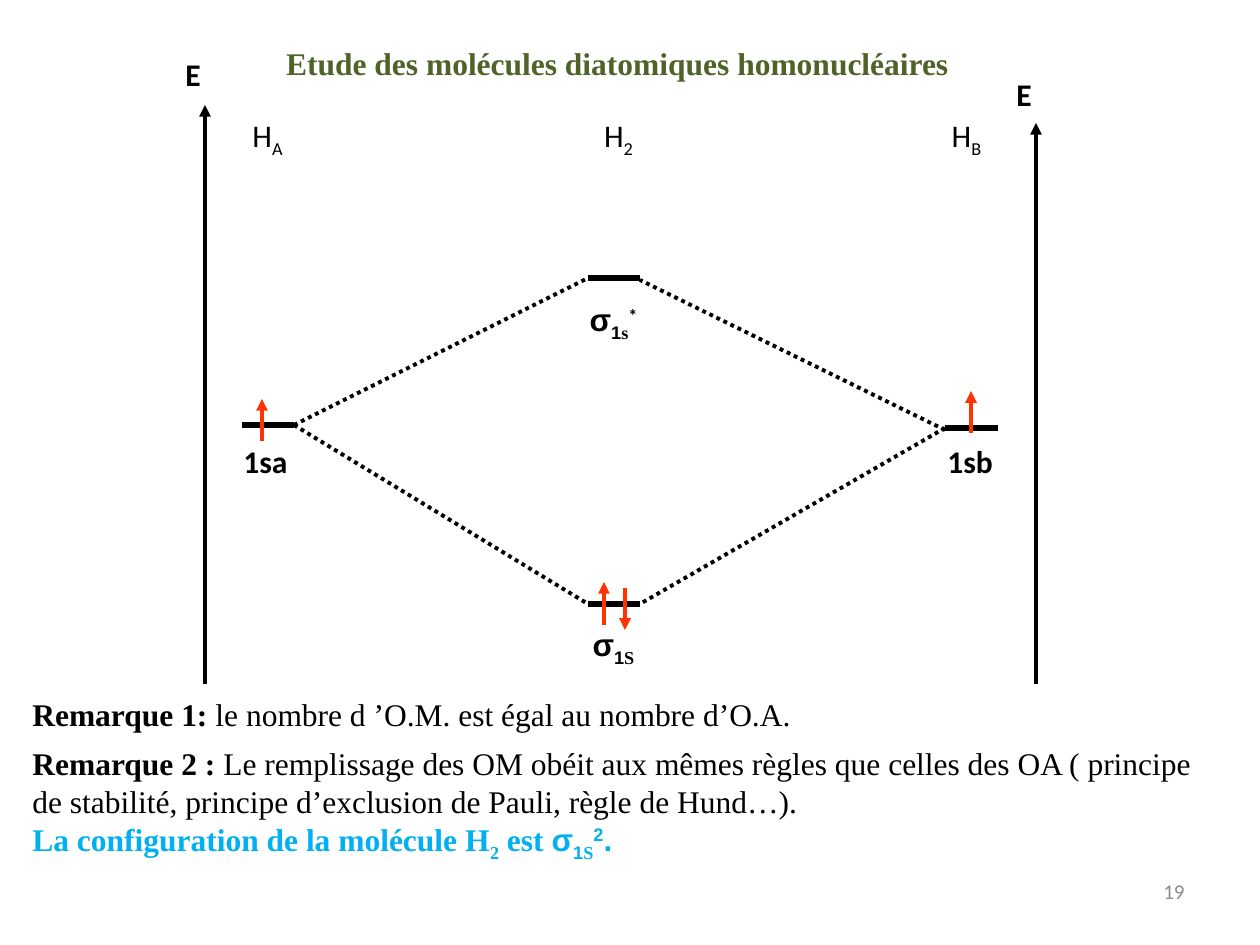
import pptx
import pptx.util
import pptx.dml.color
import pptx.enum.dml
import pptx.enum.shapes
import pptx.enum.text
import pptx.oxml.ns
import lxml.etree

SCALE = 914400 / 126
color = pptx.dml.color.RGBColor.from_string
ALIGN = pptx.enum.text.PP_ALIGN
ANCHOR = pptx.enum.text.MSO_ANCHOR

presentation = pptx.Presentation()
presentation.slide_width = pptx.util.Inches(10)
presentation.slide_height = pptx.util.Inches(7.5)
slide = presentation.slides.add_slide(presentation.slide_layouts[5])


def write_text(shape, box, paragraphs, align=ALIGN.LEFT, anchor=ANCHOR.TOP):
    for name, length in zip(("left", "top", "width", "height"), box):
        setattr(shape, name, round(length * SCALE))
    frame = shape.text_frame
    frame.word_wrap = True
    frame.auto_size = pptx.enum.text.MSO_AUTO_SIZE.NONE
    frame.vertical_anchor = anchor
    for index, runs in enumerate(paragraphs):
        paragraph = frame.add_paragraph() if index else frame.paragraphs[0]
        paragraph.alignment = align
        for text, font_name, size, bold, hue, baseline in runs:
            run = paragraph.add_run()
            run.text = text
            font_format = {"name": font_name, "size": pptx.util.Pt(size), "bold": bold}
            for name, value in font_format.items():
                setattr(run.font, name, value)
            run.font.color.rgb = color(hue)
            if baseline:
                run._r.get_or_add_rPr().set("baseline", str(baseline * 1000))


def draw_line(points, hue, width, dotted=False, arrow=False):
    connector = slide.shapes.add_connector(
        pptx.enum.shapes.MSO_CONNECTOR.STRAIGHT, *[round(point * SCALE) for point in points])
    connector.line.color.rgb = color(hue)
    connector.line.width = pptx.util.Pt(width)
    if dotted:
        connector.line.dash_style = pptx.enum.dml.MSO_LINE.ROUND_DOT
    if arrow:
        tail = lxml.etree.SubElement(connector.line._get_or_add_ln(), pptx.oxml.ns.qn("a:tailEnd"))
        tail.set("type", "triangle")
    lxml.etree.SubElement(connector._element.spPr, pptx.oxml.ns.qn("a:effectLst"))


BLACK, GREEN, BLUE, RED, GREY = "000000", "4F6228", "00B0F0", "FF3300", "8C8C8C"
SANS, SERIF, SYMBOL = "Calibri", "Times New Roman", "Arial"

write_text(slide.shapes.title, (189, 38, 857, 50),
           [[("Etude des molécules diatomiques homonucléaires", SERIF, 18, True, GREEN, 0)]],
           ALIGN.CENTER)

for left, subscript in ((231, "A"), (582, "2"), (930, "B")):
    write_text(slide.shapes.add_textbox(0, 0, 0, 0), (left, 110, 73, 50),
               [[("H", SANS, 18, False, BLACK, 0), (subscript, SANS, 18, False, BLACK, -25)]],
               ALIGN.CENTER)

for start, end, level in ((588, 640, 278), (588, 640, 604), (242, 294, 425), (945, 998, 428)):
    draw_line((start, level, end, level), BLACK, 3)

for points in ((294, 425, 588, 604), (945, 428, 640, 604),
               (294, 425, 588, 278), (945, 430, 640, 280)):
    draw_line(points, BLACK, 2.25, dotted=True)

for x, start, end in ((262, 441, 399), (971, 433, 391), (604, 625, 582), (625, 588, 630)):
    draw_line((x, start, x, end), RED, 2.25, arrow=True)

for x, top, label_top in ((205, 105, 49), (1036, 123, 69)):
    draw_line((x, 684, x, top), BLACK, 2.25, arrow=True)
    write_text(slide.shapes.add_textbox(0, 0, 0, 0), (x - 32, label_top, 63, 45),
               [[("E", SANS, 18, True, BLACK, 0)]])

for left, label in ((231, "1sa"), (935, "1sb")):
    write_text(slide.shapes.add_textbox(0, 0, 0, 0), (left, 436, 73, 50),
               [[(label, SANS, 18, True, BLACK, 0)]])

for top, letter, star in ((294, "s", [("*", SANS, 18, True, BLACK, 30)]), (619, "S", [])):
    write_text(slide.shapes.add_textbox(0, 0, 0, 0), (577, top, 73, 50),
               [[("σ", SYMBOL, 18, True, BLACK, 0), ("1", SYMBOL, 18, True, BLACK, -25),
                 (letter, SERIF, 18, True, BLACK, -25)] + star], ALIGN.CENTER)

write_text(slide.shapes.add_textbox(0, 0, 0, 0), (20, 689, 1260, 50),
           [[("Remarque 1: ", SERIF, 18, True, BLACK, 0),
             ("le nombre d ’O.M. est égal au nombre d’O.A.", SERIF, 18, False, BLACK, 0)]])
write_text(slide.shapes.add_textbox(0, 0, 0, 0), (20, 738, 1201, 127),
           [[("Remarque 2 : ", SERIF, 18, True, BLACK, 0),
             ("Le remplissage des OM obéit aux mêmes règles que celles des OA ( principe de "
              "stabilité, principe d’exclusion de Pauli, règle de Hund…).",
              SERIF, 18, False, BLACK, 0)],
            [("La configuration de la molécule H", SERIF, 18, True, BLUE, 0),
             ("2", SERIF, 18, True, BLUE, -25),
             (" est ", SERIF, 18, True, BLUE, 0),
             ("σ", SYMBOL, 18, True, BLUE, 0),
             ("1", SYMBOL, 18, True, BLUE, -25),
             ("S", SERIF, 18, True, BLUE, -25),
             ("2", SYMBOL, 18, True, BLUE, 30),
             (".", SYMBOL, 18, True, BLUE, 0)]])
write_text(slide.shapes.add_textbox(0, 0, 0, 0), (903, 866, 294, 50),
           [[("19", SANS, 12, False, GREY, 0)]], ALIGN.RIGHT, ANCHOR.MIDDLE)

presentation.save("out.pptx")
